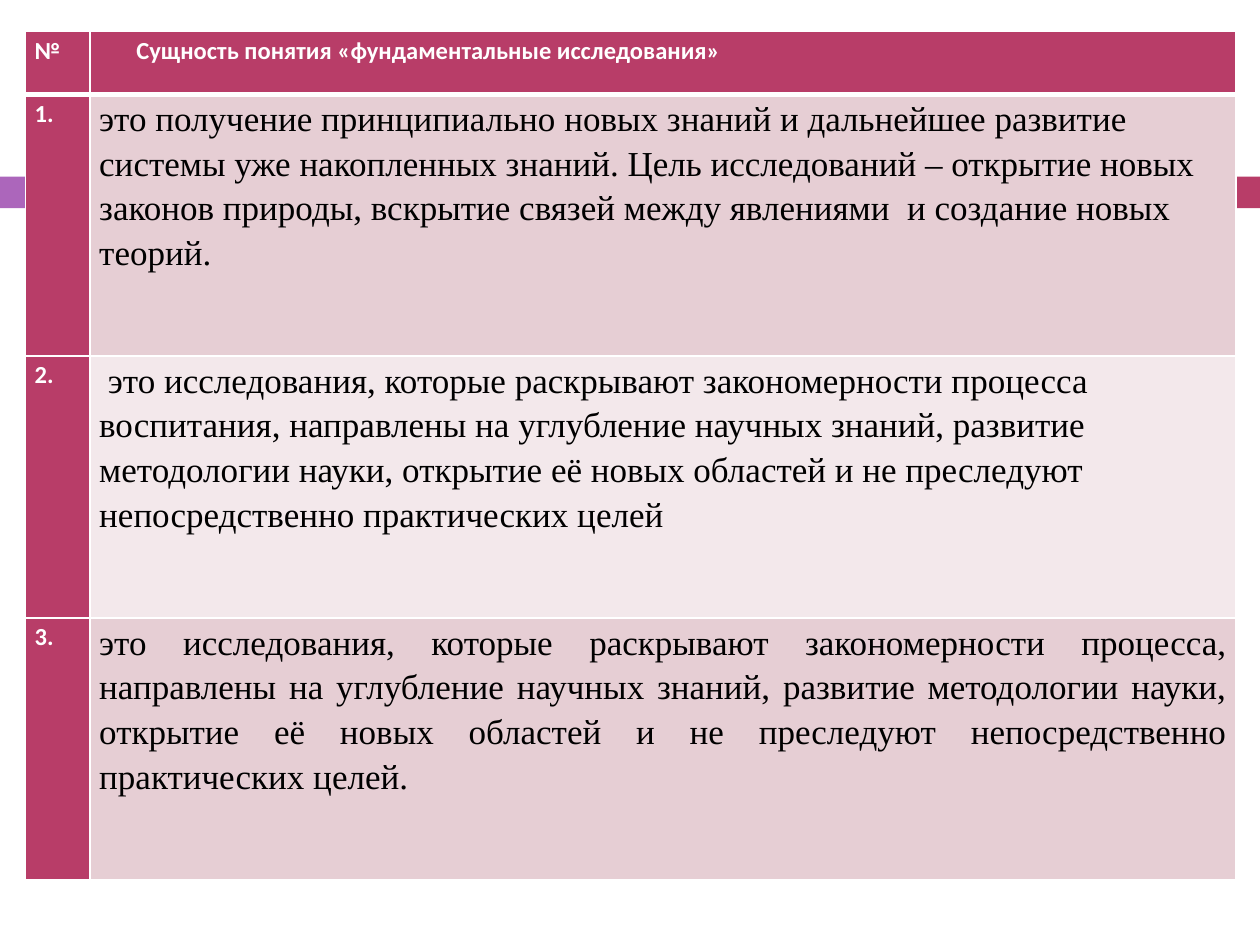
from lxml import etree
from pptx import Presentation
from pptx.dml.color import RGBColor
from pptx.enum.shapes import MSO_SHAPE
from pptx.enum.text import PP_ALIGN
from pptx.oxml.ns import qn
from pptx.util import Cm, Pt

RECTANGLE = MSO_SHAPE.RECTANGLE
LEFT, JUSTIFY = PP_ALIGN.LEFT, PP_ALIGN.JUSTIFY

WHITE = RGBColor(0xFF, 0xFF, 0xFF)
BLACK = RGBColor(0x00, 0x00, 0x00)
CRIMSON = RGBColor(0xB8, 0x3D, 0x68)
VIOLET = RGBColor(0xAC, 0x66, 0xBB)
PINK = RGBColor(0xE6, 0xCE, 0xD4)
PALE_PINK = RGBColor(0xF3, 0xE8, 0xEB)

HEADER = ("№", "Сущность понятия «фундаментальные исследования»")
DEFINITIONS = [
    ("это получение принципиально новых знаний и дальнейшее развитие системы уже "
     "накопленных знаний. Цель исследований – открытие новых законов природы, "
     "вскрытие связей между явлениями  и создание новых теорий.", LEFT),
    (" это исследования, которые раскрывают закономерности процесса воспитания, "
     "направлены на углубление научных знаний, развитие методологии науки, открытие "
     "её новых областей и не преследуют непосредственно практических целей", LEFT),
    ("это исследования, которые раскрывают закономерности процесса, направлены на "
     "углубление научных знаний, развитие методологии науки, открытие её новых "
     "областей и не преследуют непосредственно практических целей.", JUSTIFY),
]

SLIDE_WIDTH, SLIDE_HEIGHT = Cm(25.4), Cm(19.05)
BAR_TOP, BAR_HEIGHT = Cm(3.56), Cm(0.64)
BARS = [(Cm(0), Cm(1.47), VIOLET), (Cm(1.65), Cm(23.75), CRIMSON)]
TABLE_LEFT, TABLE_TOP = Cm(0.51), Cm(0.64)
COLUMN_WIDTHS = [Cm(1.3), Cm(23.11)]
ROW_HEIGHTS = [Cm(1.26)] + [Cm(5.28)] * len(DEFINITIONS)
CELL_MARGIN = Cm(0.19)
HEADER_INDENT = Cm(0.75)
THIN, THICK = Pt(1), Pt(3)


def set_borders(cell, top, bottom):
    properties = cell._tc.get_or_add_tcPr()
    for side, width in (("L", THIN), ("R", THIN), ("T", top), ("B", bottom)):
        line = etree.SubElement(properties, qn(f"a:ln{side}"), w=str(width))
        fill = etree.SubElement(line, qn("a:solidFill"))
        etree.SubElement(fill, qn("a:srgbClr"), val=str(WHITE))


def fill_cell(cell, text, background, is_label, alignment=LEFT, indent=0):
    cell.margin_left = cell.margin_right = CELL_MARGIN
    cell.margin_top = cell.margin_bottom = 0
    cell.fill.solid()
    cell.fill.fore_color.rgb = background
    cell.text = text
    paragraph = cell.text_frame.paragraphs[0]
    paragraph.alignment = alignment
    paragraph.line_spacing = 1.15
    paragraph.space_after = Pt(10)
    if indent:
        paragraph._p.get_or_add_pPr().set("marL", str(indent))
    font = paragraph.font
    font.name = "Calibri" if is_label else "Times New Roman"
    font.size = Pt(14 if is_label else 20)
    font.bold = is_label
    font.color.rgb = WHITE if is_label else BLACK


def add_bars(slide):
    for left, width, color in BARS:
        bar = slide.shapes.add_shape(RECTANGLE, left, BAR_TOP, width, BAR_HEIGHT)
        bar.shadow.inherit = False
        bar.fill.solid()
        bar.fill.fore_color.rgb = color
        bar.line.fill.background()


def add_definitions_table(slide):
    table = slide.shapes.add_table(
        len(ROW_HEIGHTS), len(COLUMN_WIDTHS), TABLE_LEFT, TABLE_TOP,
        sum(COLUMN_WIDTHS), sum(ROW_HEIGHTS)).table
    table.horz_banding = False
    for column, width in zip(table.columns, COLUMN_WIDTHS):
        column.width = width
    for index, (row, height) in enumerate(zip(table.rows, ROW_HEIGHTS)):
        row.height = height
        for cell in row.cells:
            set_borders(cell, top=THICK if index == 1 else THIN,
                        bottom=THICK if index == 0 else THIN)

    fill_cell(table.cell(0, 0), HEADER[0], CRIMSON, True)
    fill_cell(table.cell(0, 1), HEADER[1], CRIMSON, True, indent=HEADER_INDENT)
    for number, (definition, alignment) in enumerate(DEFINITIONS, start=1):
        band = PINK if number % 2 else PALE_PINK
        fill_cell(table.cell(number, 0), f"{number}.", CRIMSON, True)
        fill_cell(table.cell(number, 1), definition, band, False, alignment)


def main():
    presentation = Presentation()
    presentation.slide_width = SLIDE_WIDTH
    presentation.slide_height = SLIDE_HEIGHT
    slide = presentation.slides.add_slide(presentation.slide_layouts[6])
    add_bars(slide)
    add_definitions_table(slide)
    presentation.save("out.pptx")


if __name__ == "__main__":
    main()
